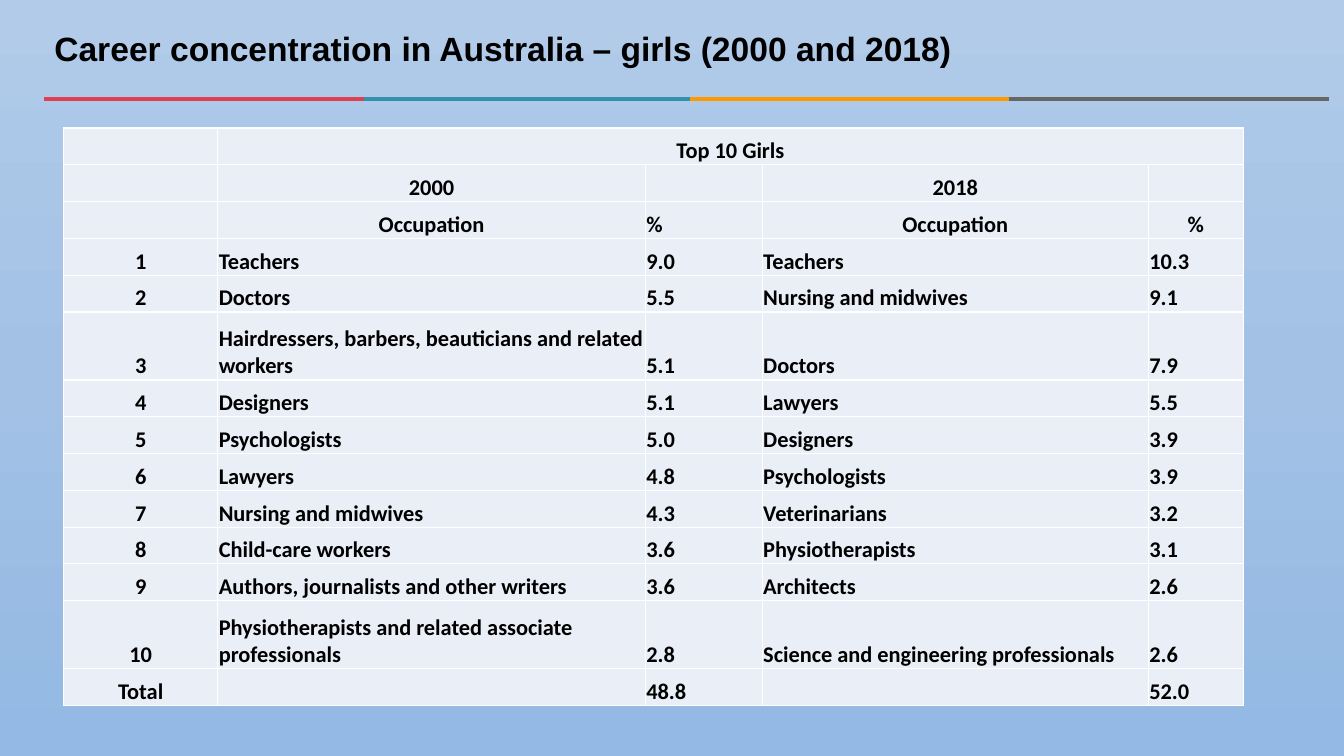
from copy import deepcopy

from lxml import etree
from pptx import Presentation
from pptx import util as u
from pptx.dml import color
from pptx.enum import shapes, text
from pptx.oxml import ns

COLOURS = {
    "red": "DE3F53", "teal": "3392AB", "orange": "FF9900", "grey": "666666",
    "sky_top": "B1CBE9", "sky_middle": "A3C1E5", "sky_bottom": "93B9E4",
    "cell": "EAEFF7", "border": "FFFFFF", "ink": "000000",
}
TITLE_FONT = {"name": "Arial", "size": u.Pt(24), "bold": True}
TABLE_FONT = {"name": "Calibri", "size": u.Pt(16), "bold": True}
TITLE_FRAME = {"word_wrap": True, "vertical_anchor": text.MSO_ANCHOR.MIDDLE}
CELL_FORMAT = {
    "margin_left": u.Inches(0.01), "margin_right": u.Inches(0.01),
    "margin_top": u.Inches(0.01), "margin_bottom": 0,
    "vertical_anchor": text.MSO_ANCHOR.BOTTOM,
}
TABLE_FORMAT = {"first_row": False, "horz_banding": False}

HEADINGS = [
    ("", "Top 10 Girls", "", "", ""),
    ("", "2000", "", "2018", ""),
    ("", "Occupation", "%", "Occupation", "%"),
]
RANKING = [
    ("Teachers", "9.0", "Teachers", "10.3"),
    ("Doctors", "5.5", "Nursing and midwives", "9.1"),
    ("Hairdressers, barbers, beauticians and related workers", "5.1", "Doctors", "7.9"),
    ("Designers", "5.1", "Lawyers", "5.5"),
    ("Psychologists", "5.0", "Designers", "3.9"),
    ("Lawyers", "4.8", "Psychologists", "3.9"),
    ("Nursing and midwives", "4.3", "Veterinarians", "3.2"),
    ("Child-care workers", "3.6", "Physiotherapists", "3.1"),
    ("Authors, journalists and other writers", "3.6", "Architects", "2.6"),
    ("Physiotherapists and related associate professionals", "2.8",
     "Science and engineering professionals", "2.6"),
]
TOTAL = ("Total", "", "48.8", "", "52.0")
COLUMN_SPANS = [11.48, 31.81, 8.7, 28.73, 7.05]
SINGLE_ROW, DOUBLE_ROW = 4.87, 9
TWO_LINE_RANKS = ("3", "10")
RULE_STOPS = [3.3, 27.08, 51.31, 75.09, 98.87]
RULE_COLOURS = ["red", "teal", "orange", "grey"]


def apply_format(target, values):
    for name, value in values.items():
        setattr(target, name, value)


def rgb(name):
    return color.RGBColor.from_string(COLOURS[name])


class SlideBuilder:
    """Places styled elements on a slide divided into 100 columns and 100 rows."""

    def __init__(self, presentation):
        self.column = presentation.slide_width / 100
        self.row = presentation.slide_height / 100
        self.slide = presentation.slides.add_slide(presentation.slide_layouts[6])

    def across(self, columns):
        return round(columns * self.column)

    def down(self, rows):
        return round(rows * self.row)

    def box(self, left, top, width, height):
        return self.across(left), self.down(top), self.across(width), self.down(height)

    def background(self, names):
        fill = self.slide.background.fill
        fill.gradient()
        fill.gradient_angle = 270
        first = fill.gradient_stops[0]._gs
        first.addnext(deepcopy(first))
        for index, (stop, name) in enumerate(zip(fill.gradient_stops, names)):
            stop.position = index / (len(names) - 1)
            stop.color.rgb = rgb(name)

    def rule(self, start, end, height, name):
        line = self.slide.shapes.add_connector(
            shapes.MSO_CONNECTOR.STRAIGHT, self.across(start), self.down(height),
            self.across(end), self.down(height))
        line.line.color.rgb = rgb(name)
        line.line.width = u.Pt(2.75)
        etree.SubElement(line._element.spPr, ns.qn("a:effectLst"))

    def add_words(self, paragraph, words, font):
        run = paragraph.add_run()
        run.text = words
        apply_format(run.font, font)
        run.font.color.rgb = rgb("ink")

    def title(self, words, box):
        frame = self.slide.shapes.add_textbox(*self.box(*box)).text_frame
        apply_format(frame, TITLE_FRAME)
        frame.paragraphs[0].line_spacing = 0.9
        self.add_words(frame.paragraphs[0], words, TITLE_FONT)

    def borders(self, cell):
        properties = cell._tc.get_or_add_tcPr()
        for index, side in enumerate(("lnL", "lnR", "lnT", "lnB")):
            line = etree.Element(ns.qn(f"a:{side}"), w=str(u.Pt(1)))
            fill = etree.SubElement(line, ns.qn("a:solidFill"))
            etree.SubElement(fill, ns.qn("a:srgbClr"), val=COLOURS["border"])
            properties.insert(index, line)

    def cell(self, cell, words, centred):
        apply_format(cell, CELL_FORMAT)
        cell.fill.solid()
        cell.fill.fore_color.rgb = rgb("cell")
        self.borders(cell)
        if words:
            paragraph = cell.text_frame.paragraphs[0]
            paragraph.alignment = text.PP_ALIGN.CENTER if centred else text.PP_ALIGN.LEFT
            self.add_words(paragraph, words, TABLE_FONT)

    def table(self, left, top, spans, heights, rows):
        frame = self.slide.shapes.add_table(
            len(rows), len(spans), *self.box(left, top, sum(spans), sum(heights)))
        table = frame.table
        apply_format(table, TABLE_FORMAT)
        for column, span in zip(table.columns, spans):
            column.width = self.across(span)
        for row, height in zip(table.rows, heights):
            row.height = self.down(height)
        for i, row in enumerate(rows):
            for j, words in enumerate(row):
                heading = i < len(HEADINGS) and j != 2
                self.cell(table.cell(i, j), words, heading or j == 0)
        table.cell(0, 1).merge(table.cell(0, 4))


def main():
    presentation = Presentation()
    presentation.slide_width = u.Inches(13.33)
    presentation.slide_height = u.Inches(7.5)
    builder = SlideBuilder(presentation)
    builder.background(["sky_top", "sky_middle", "sky_bottom"])
    for start, end, name in zip(RULE_STOPS, RULE_STOPS[1:], RULE_COLOURS):
        builder.rule(start, end, 13.07, name)
    builder.title("Career concentration in Australia – girls (2000 and 2018)",
                  (3.3, 1.47, 95.65, 10.4))
    ranked = [(str(rank), *entry) for rank, entry in enumerate(RANKING, 1)]
    rows = [*HEADINGS, *ranked, TOTAL]
    heights = [DOUBLE_ROW if row[0] in TWO_LINE_RANKS else SINGLE_ROW for row in rows]
    builder.table(4.73, 16.93, COLUMN_SPANS, heights, rows)
    presentation.save("out.pptx")


if __name__ == "__main__":
    main()
